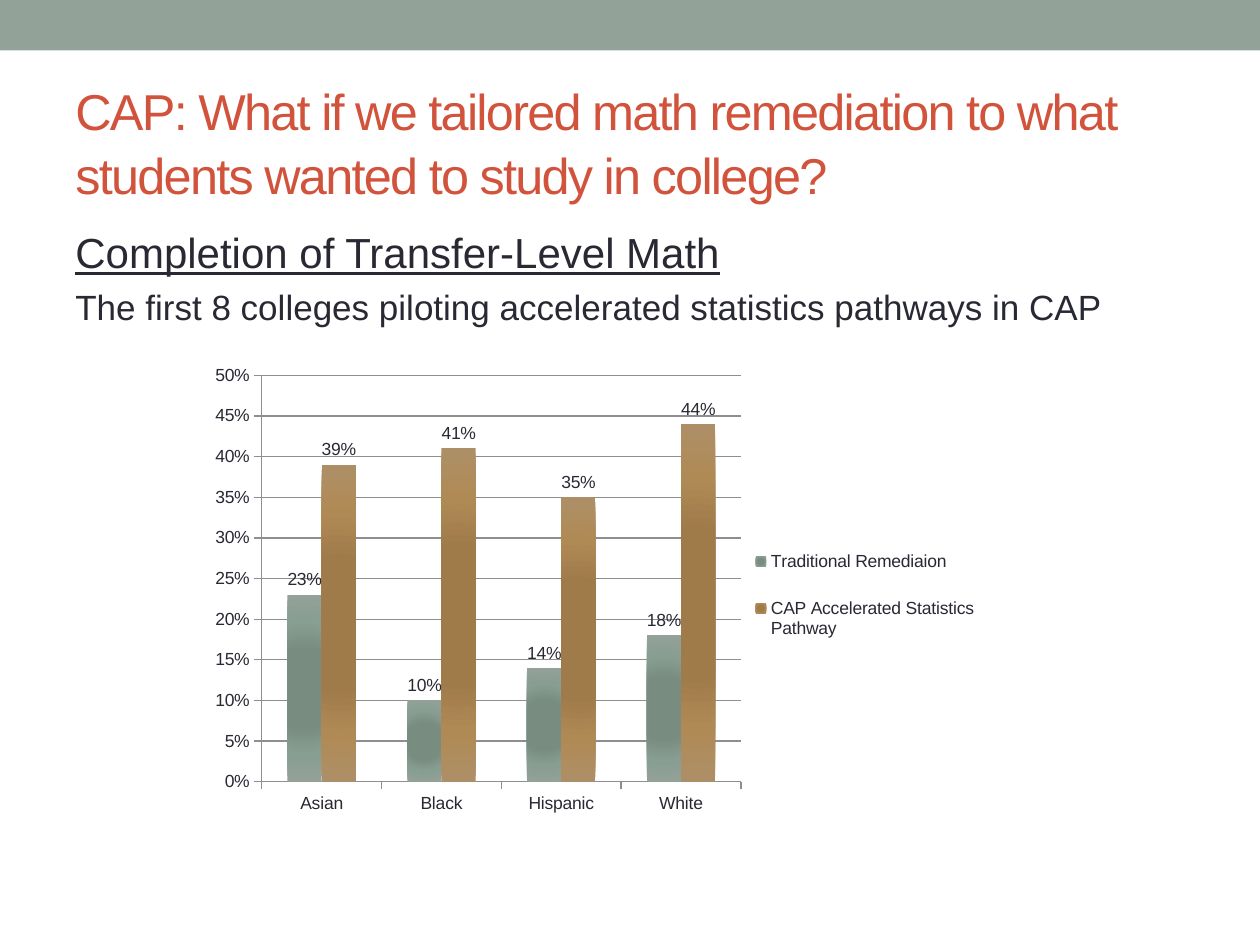
from lxml.etree import fromstring
from pptx import Presentation
from pptx.chart.data import CategoryChartData
from pptx.dml.color import RGBColor
from pptx.enum.chart import XL_CHART_TYPE, XL_LABEL_POSITION, XL_LEGEND_POSITION, XL_TICK_MARK
from pptx.enum.shapes import MSO_SHAPE
from pptx.enum.text import MSO_ANCHOR
from pptx.oxml.ns import qn
from pptx.util import Cm, Pt

SAGE = RGBColor(0x93, 0xA2, 0x99)
MOSS = RGBColor(0x89, 0x9E, 0x92)
PINE = RGBColor(0x78, 0x8C, 0x80)
SAND = RGBColor(0xAD, 0x8F, 0x67)
GOLD = RGBColor(0xB0, 0x8A, 0x55)
BROWN = RGBColor(0x9F, 0x7B, 0x4A)
RUST = RGBColor(0xD2, 0x53, 0x3C)
INK = RGBColor(0x29, 0x29, 0x34)
GREY = RGBColor(0x8E, 0x8E, 0x8E)
FONT = "Arial"
DRAW = "http://schemas.openxmlformats.org/drawingml/2006/main"
CHART = "http://schemas.openxmlformats.org/drawingml/2006/chart"


def write(para, text, size, color=INK, under=False, track=0, before=0, line=None):
    para.space_before = Pt(before)
    para.line_spacing = line
    run = para.add_run()
    run.text = text
    font = run.font
    font.name, font.size, font.underline = FONT, Pt(size), under
    font.color.rgb = color
    if track:
        font._element.set("spc", str(track * 100))


def frame(slide, box, anchor=MSO_ANCHOR.TOP):
    text = slide.shapes.add_textbox(*box).text_frame
    text.word_wrap = True
    text.vertical_anchor = anchor
    return text


def band(slide, box):
    shape = slide.shapes.add_shape(MSO_SHAPE.RECTANGLE, *box)
    shape.shadow.inherit = False
    shape.fill.solid()
    shape.fill.fore_color.rgb = SAGE
    shape.line.fill.background()


def title(slide, box):
    text = frame(slide, box, MSO_ANCHOR.MIDDLE)
    write(text.paragraphs[0],
          "CAP: What if we tailored math remediation to what students wanted to study in college?",
          28.8, color=RUST, track=-1, line=1.05)


def body(slide, box):
    text = frame(slide, box)
    write(text.paragraphs[0], "Completion of Transfer-Level Math", 24, under=True, before=4.8)
    write(text.add_paragraph(),
          "The first 8 colleges piloting accelerated statistics pathways in CAP", 20, before=4.8)


def layout(x, y, w, h, inner=False):
    target = '<c:layoutTarget val="inner"/>' if inner else ""
    return fromstring(
        f'<c:layout xmlns:c="{CHART}"><c:manualLayout>{target}'
        '<c:xMode val="edge"/><c:yMode val="edge"/>'
        f'<c:x val="{x}"/><c:y val="{y}"/><c:w val="{w}"/><c:h val="{h}"/>'
        '</c:manualLayout></c:layout>')


def glow(series, core, mid, edge):
    stops = "".join(f'<a:gs pos="{pos}"><a:srgbClr val="{color}"/></a:gs>'
                    for pos, color in ((0, core), (40000, core), (70000, mid), (100000, edge)))
    fill = fromstring(
        f'<a:gradFill xmlns:a="{DRAW}" rotWithShape="1"><a:gsLst>{stops}</a:gsLst>'
        '<a:path path="circle"><a:fillToRect l="50000" t="50000" r="50000" b="50000"/></a:path>'
        '</a:gradFill>')
    series._element.get_or_add_spPr().insert(0, fill)


def stroke(line):
    line.color.rgb = GREY
    line.width = Pt(0.75)


def graph(slide, box):
    data = CategoryChartData(number_format="0%")
    data.categories = ["Asian", "Black", "Hispanic", "White"]
    data.add_series("Traditional Remediaion", [0.23, 0.1, 0.14, 0.18])
    data.add_series("CAP Accelerated Statistics Pathway", [0.39, 0.41, 0.35, 0.44])
    chart = slide.shapes.add_chart(XL_CHART_TYPE.COLUMN_CLUSTERED, *box, data).chart
    chart.has_title = False
    chart.font.name, chart.font.size = FONT, Pt(10)
    chart.font.color.rgb = INK

    chart.has_legend = True
    legend = chart.legend
    legend.position = XL_LEGEND_POSITION.RIGHT
    legend.include_in_layout = False
    legend._element.find(qn("c:legendPos")).addnext(layout(0.68, 0.36, 0.31, 0.3))

    area = chart._chartSpace.chart.plotArea
    for old in area.findall(qn("c:layout")):
        area.remove(old)
    area.insert(0, layout(0.08, 0.04, 0.6, 0.87, inner=True))

    plot = chart.plots[0]
    plot.gap_width, plot.overlap = 150, 0
    plot.vary_by_categories = False
    for series, colors in zip(plot.series, ((PINE, MOSS, SAGE), (BROWN, GOLD, SAND))):
        glow(series, *colors)
        labels = series.data_labels
        labels.show_value = True
        labels.number_format, labels.number_format_is_linked = "0%", False
        labels.position = XL_LABEL_POSITION.OUTSIDE_END

    for axis in (chart.category_axis, chart.value_axis):
        axis.major_tick_mark = XL_TICK_MARK.OUTSIDE
        axis.minor_tick_mark = XL_TICK_MARK.NONE
        stroke(axis.format.line)
    value = chart.value_axis
    value.minimum_scale, value.maximum_scale, value.major_unit = 0, 0.5, 0.05
    value.has_major_gridlines = True
    stroke(value.major_gridlines.format.line)
    value.tick_labels.number_format = "0%"
    value.tick_labels.number_format_is_linked = False


def main():
    deck = Presentation()
    deck.slide_width, deck.slide_height = Cm(25.4), Cm(19.05)
    slide = deck.slides.add_slide(deck.slide_layouts[6])
    band(slide, (0, 0, deck.slide_width, Cm(1.02)))
    title(slide, (Cm(1.27), Cm(1.47), Cm(22.86), Cm(2.74)))
    body(slide, (Cm(1.27), Cm(4.45), Cm(22.86), Cm(13.54)))
    graph(slide, (Cm(3.99), Cm(7.19), Cm(16.1), Cm(9.42)))
    deck.save("out.pptx")


if __name__ == "__main__":
    main()
